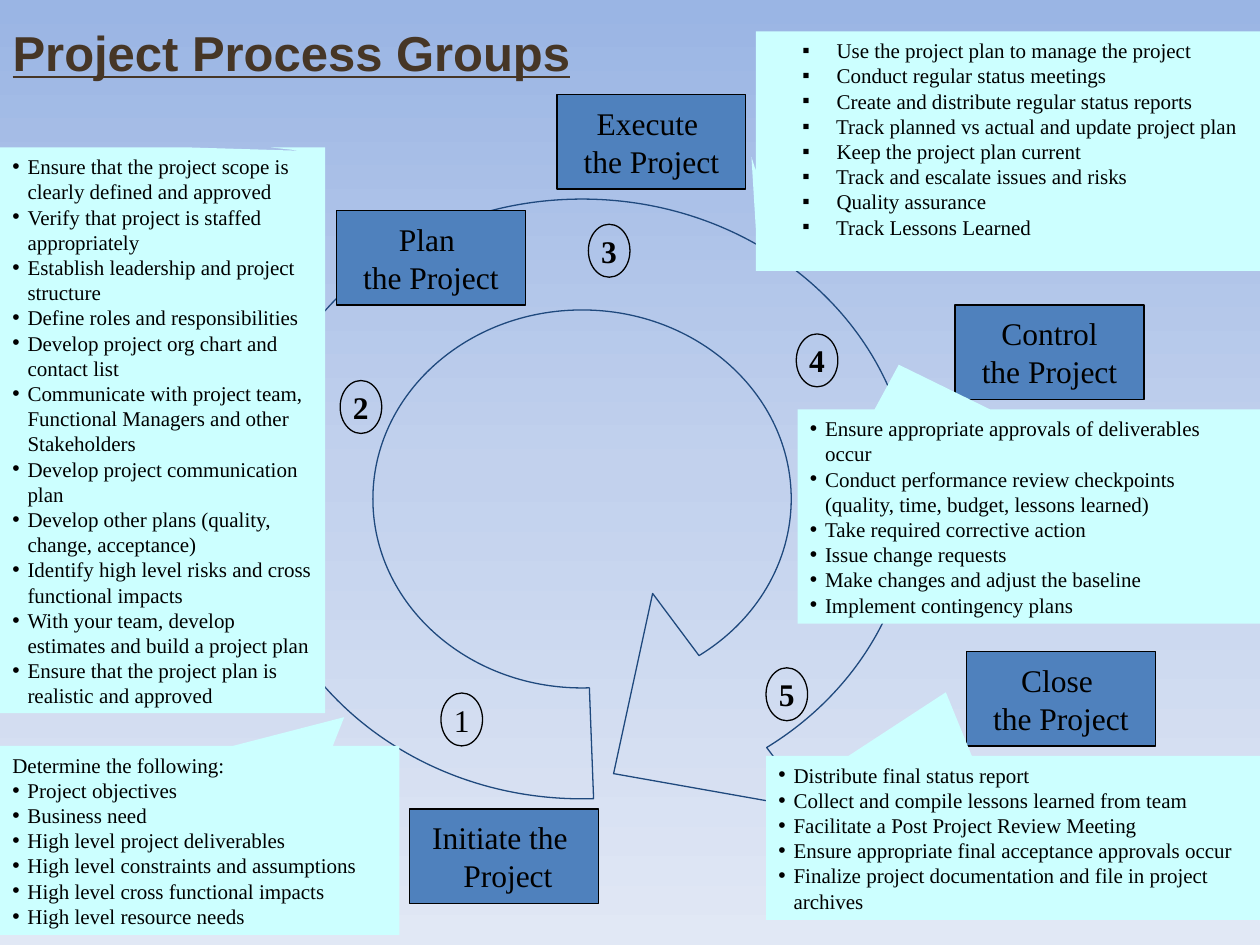
from dataclasses import dataclass
from copy import deepcopy
from math import cos, radians, sin, tan

from lxml.etree import SubElement
from pptx import Presentation
from pptx.dml.color import RGBColor
from pptx.enum.shapes import MSO_SHAPE as Preset
from pptx.enum.text import MSO_ANCHOR as Anchor, PP_ALIGN as Align
from pptx.oxml.ns import qn
from pptx.util import Inches, Pt

Point = tuple[float, float]

BLACK, BLUE, NAVY, PALE, BROWN = "000000", "4F81BD", "1F497D", "CCFFFF", "463626"
SERIF = "Times New Roman"
BACKGROUND = [(0, "9AB5E4"), (0.5, "C2D1ED"), (1, "E1E8F5")]
RING_CENTER = (4.62, 3.96)
OUTER_RADII, INNER_RADII = (2.62, 2.38), (1.66, 1.5)
RING_HEIGHT = 4.75


@dataclass
class Stage:
    number: str
    lines: tuple[str, str]
    label_at: Point
    number_at: Point
    bold: bool = True


@dataclass
class Callout:
    frame: tuple[float, float, float, float]
    tip: Point
    items: list[str]
    heading: str = ""
    bullet: str = "•"
    margin: float = 0.12
    indent: float = -0.12
    level: int = 0


@dataclass
class Segment:
    """A line to end, or a Bezier curve when it has controls."""
    end: Point
    controls: tuple[Point, ...] = ()


STAGES = [
    Stage("1", ("Initiate the ", " Project"), (3.25, 6.42), (3.5, 5.5), bold=False),
    Stage("2", ("Plan ", "the Project"), (2.67, 1.67), (2.7, 3.02)),
    Stage("3", ("Execute ", "the Project"), (4.42, 0.75), (4.67, 1.78)),
    Stage("4", ("Control", "the Project"), (7.58, 2.42), (6.32, 2.65)),
    Stage("5", ("Close ", "the Project"), (7.67, 5.17), (6.08, 5.3)),
]

CALLOUTS = [
    Callout((6.08, 6, 3.92, 1.3), (-0.136, -0.889), [
        "Distribute final status report",
        "Collect and compile lessons learned from team",
        "Facilitate a Post Project Review Meeting",
        "Ensure appropriate final acceptance approvals occur",
        "Finalize project documentation and file in project archives",
    ]),
    Callout((6.33, 3.25, 3.67, 1.7), (-0.281, -0.709), [
        "Ensure appropriate approvals of deliverables occur",
        "Conduct performance review checkpoints (quality, time, budget, lessons learned)",
        "Take required corrective action",
        "Issue change requests",
        "Make changes and adjust the baseline",
        "Implement contingency plans",
    ]),
    Callout((6, 0.25, 4, 1.9), (-0.509, 0.024), [
        " Use the project plan to manage the project",
        " Conduct regular status meetings",
        " Create and distribute regular status reports",
        " Track planned vs actual and update project plan",
        " Keep the project plan current",
        " Track and escalate issues and risks",
        " Quality assurance",
        " Track Lessons Learned",
    ], bullet="▪", margin=0.5, indent=-0.23, level=1),
    Callout((0, 1.17, 2.58, 4.49), (0.427, -0.494), [
        "Ensure that the project scope is clearly defined and approved",
        "Verify that project is staffed appropriately",
        "Establish leadership and project structure",
        "Define roles and responsibilities",
        "Develop project org chart and contact list",
        "Communicate with project team, Functional Managers and other Stakeholders",
        "Develop project communication plan",
        "Develop other plans (quality, change, acceptance)",
        "Identify high level risks and cross functional impacts",
        "With your team, develop estimates and build a project plan",
        "Ensure that the project plan is realistic and approved",
    ]),
    Callout((0, 5.92, 3.17, 1.5), (0.362, -0.652), [
        "Project objectives",
        "Business need",
        "High level project deliverables",
        "High level constraints and assumptions",
        "High level cross functional impacts",
        "High level resource needs",
    ], heading="Determine the following:"),
]


def color(value: str) -> RGBColor:
    return RGBColor.from_string(value)


def style_shape(shape, fill: str | None, line: str | None) -> None:
    shape.shadow.inherit = False
    if fill:
        shape.fill.solid()
        shape.fill.fore_color.rgb = color(fill)
    else:
        shape.fill.background()
    if line:
        shape.line.color.rgb = color(line)
        shape.line.width = Pt(0.75)
    else:
        shape.line.fill.background()


def add_span(para, text: str, size: float, bold: bool = False,
             font: str = SERIF, ink: str = BLACK):
    span = para.add_run()
    span.text = text
    span.font.size, span.font.bold, span.font.name = Pt(size), bold, font
    span.font.color.rgb = color(ink)
    return span


def next_para(frame, index: int):
    return frame.add_paragraph() if index else frame.paragraphs[0]


def paint_background(page) -> None:
    fill = page.background.fill
    fill.gradient()
    fill.gradient_angle = 270  # counter-clockwise, so top to bottom
    stops = page.element.find(f".//{qn('a:gsLst')}")
    stops.append(deepcopy(stops[-1]))
    for stop, (position, value) in zip(fill.gradient_stops, BACKGROUND):
        stop.position = position
        stop.color.rgb = color(value)


def add_title(page, text: str) -> None:
    title = page.shapes.title
    title.left, title.top, title.width, title.height = map(Inches, (0, 0.13, 5.17, 0.57))
    title.text_frame.vertical_anchor = Anchor.TOP
    para = title.text_frame.paragraphs[0]
    para.alignment = Align.LEFT
    add_span(para, text, 28, True, "Arial", BROWN).font.underline = True


def ring_point(radii: Point, angle: float, pull: float = 0) -> Point:
    """Point clockwise from the right, moved along its tangent by pull."""
    turn = radians(angle)
    return (RING_CENTER[0] + radii[0] * (cos(turn) - pull * sin(turn)),
            RING_CENTER[1] + radii[1] * (sin(turn) + pull * cos(turn)))


def arc(radii: Point, angles: list[int]) -> list[Segment]:
    segments = []
    for start, end in zip(angles, angles[1:]):
        pull = 4 / 3 * tan(radians(end - start) / 4)
        controls = (ring_point(radii, start, pull), ring_point(radii, end, -pull))
        segments.append(Segment(ring_point(radii, end), controls))
    return segments


def add_cycle_arrow(page) -> None:
    segments = [
        *arc(INNER_RADII, [56, 0, -90, -180, -270, -272]),
        Segment(ring_point(OUTER_RADII, 88)),
        *arc(OUTER_RADII, [88, 90, 180, 270, 360, 416]),
        *map(Segment, [(6.45, 6.42), (4.87, 6.14), (5.18, 4.71)]),
    ]
    builder = page.shapes.build_freeform(*map(Inches, ring_point(INNER_RADII, 56)))
    builder.add_line_segments([tuple(map(Inches, segment.end)) for segment in segments])
    arrow = builder.convert_to_shape()
    style_shape(arrow, None, NAVY)
    for step, segment in zip(list(arrow.element.iter(qn("a:lnTo"))), segments):
        if segment.controls:
            step.tag = qn("a:cubicBezTo")
        for index, (x, y) in enumerate(segment.controls):
            control = deepcopy(step[-1])
            control.set("x", str(Inches(x) - arrow.left))
            control.set("y", str(Inches(y) - arrow.top))
            step.insert(index, control)
    # The frame encloses the ring; the arrowhead reaches below it.
    arrow.height = Inches(RING_HEIGHT)
    arrow.element.find(f".//{qn('a:path')}").set("h", str(arrow.height))


def add_centered(page, preset, at: Point, size: Point,
                 fill: str | None, lines: tuple[str, ...], bold: bool = False) -> None:
    shape = page.shapes.add_shape(preset, *map(Inches, at + size))
    style_shape(shape, fill, BLACK)
    frame = shape.text_frame
    frame.word_wrap = False
    frame.vertical_anchor = Anchor.MIDDLE
    for index, line in enumerate(lines):
        para = next_para(frame, index)
        para.alignment = Align.CENTER
        add_span(para, line, 18, bold)


def add_callout(page, callout: Callout) -> None:
    box = page.shapes.add_shape(Preset.RECTANGULAR_CALLOUT, *map(Inches, callout.frame))
    box.adjustments[0], box.adjustments[1] = callout.tip
    style_shape(box, PALE, None)
    frame = box.text_frame
    frame.word_wrap = True
    frame.vertical_anchor = Anchor.TOP
    headings = [callout.heading] if callout.heading else []
    for index, text in enumerate(headings + callout.items):
        para = next_para(frame, index)
        para.alignment, para.level = Align.LEFT, callout.level
        add_span(para, text, 12)
        properties = para._p.get_or_add_pPr()
        properties.set("marL", str(Inches(callout.margin)))
        properties.set("indent", str(Inches(callout.indent)))
        if index >= len(headings):
            SubElement(properties, qn("a:buFont"), typeface="Arial")
            SubElement(properties, qn("a:buChar"), char=callout.bullet)


def main() -> None:
    deck = Presentation()
    deck.slide_width, deck.slide_height = Inches(10), Inches(7.5)
    page = deck.slides.add_slide(deck.slide_layouts.get_by_name("Title Only"))
    paint_background(page)
    add_title(page, "Project Process Groups")
    add_cycle_arrow(page)
    for stage in STAGES:
        add_centered(page, Preset.RECTANGLE, stage.label_at, (1.5, 0.75), BLUE, stage.lines)
    for callout in CALLOUTS:
        add_callout(page, callout)
    for stage in STAGES:
        add_centered(page, Preset.OVAL, stage.number_at, (0.33, 0.42), None,
                     (stage.number,), stage.bold)
    deck.save("out.pptx")


if __name__ == "__main__":
    main()
